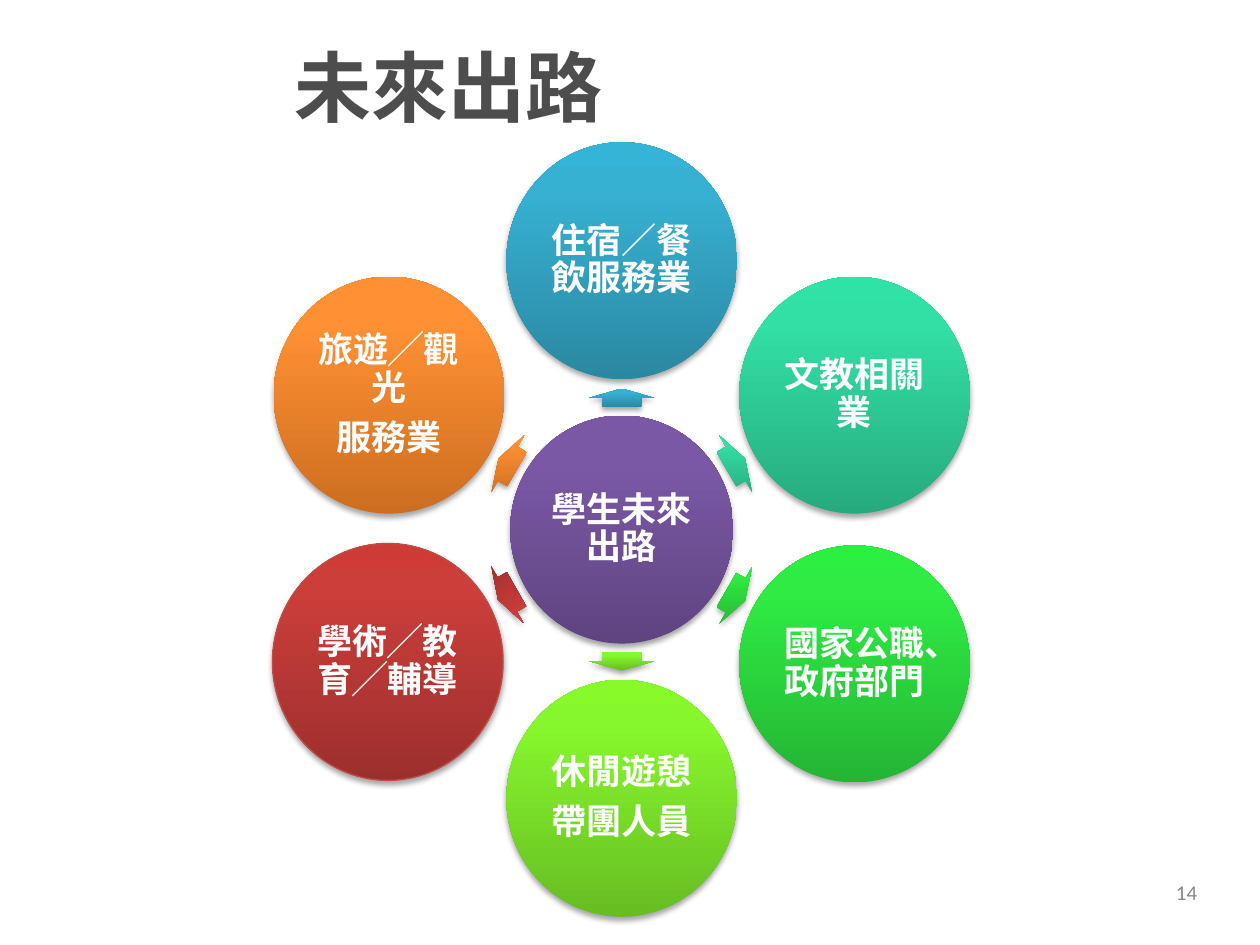
from copy import deepcopy
from dataclasses import dataclass
from math import cos, radians, sin

from lxml import etree
from pptx import Presentation
from pptx.dml.color import RGBColor
from pptx.enum import shapes as kinds, text as txt
from pptx.oxml import ns
from pptx.util import Pt


@dataclass(frozen=True)
class Theme:
    cjk: str = "Noto Sans CJK SC"
    latin: str = "Calibri"
    head: str = "4D4D4D"
    page: str = "898989"
    white: str = "FFFFFF"
    edge: str = "BF4C48"
    shade: str = "000000"
    purple: tuple = ("5F4480", "7B58A6", "7C57A8")
    blue: tuple = ("2A88A2", "37B1D2", "34B4D6")
    teal: tuple = ("27AB7E", "32DFA4", "2FE3A6")
    green: tuple = ("24B534", "2FEB43", "2CEF41")
    lime: tuple = ("67BD22", "86F62D", "86FB29")
    red: tuple = ("9C2F2D", "CB3E3A", "CE3B37")
    orange: tuple = ("CC6E20", "FF9034", "FF9136")
    title: float = 44
    label: float = 20
    small: float = 12


T = Theme()
MID = (355.3, 302.6)
RING = 153.6
REACH = 75.2
HUB = (127.4, 130.3)
DISC = (131.8, 135.4)


def rgb(code):
    return RGBColor.from_string(code)


def style(para, font, size, color, bold=False):
    for run in para.runs:
        run.font.size = Pt(size)
        run.font.bold = bold
        run.font.color.rgb = rgb(color)
        run.font.name = font
        east = etree.SubElement(run.font._element, ns.qn("a:ea"))
        east.set("typeface", font)


def add_text(slide, box, words, font, size, color, align, bold=False):
    frame = slide.shapes.add_textbox(*map(Pt, box)).text_frame
    frame.word_wrap = True
    frame.vertical_anchor = txt.MSO_ANCHOR.MIDDLE
    frame.text = words
    para = frame.paragraphs[0]
    para.alignment = align
    style(para, font, size, color, bold)


def paint(shape, tones, turn=False):
    shape.fill.gradient()
    shape.fill.gradient_angle = 90
    grad = shape._element.spPr.find(ns.qn("a:gradFill"))
    grad.set("rotWithShape", "1" if turn else "0")
    stops = grad.find(ns.qn("a:gsLst"))
    stops.append(deepcopy(stops[-1]))
    for stop, tone, place in zip(shape.fill.gradient_stops, tones, (0, 0.8, 1)):
        stop.color.rgb = rgb(tone)
        stop.position = place
    shape.line.fill.background()


def cast(shape):
    shape.shadow.inherit = False
    list_ = shape._element.spPr.find(ns.qn("a:effectLst"))
    outer = etree.SubElement(
        list_, ns.qn("a:outerShdw"), blurRad=str(Pt(3.1)), dist=str(Pt(1.8)),
        dir="5400000", rotWithShape="0")
    color = etree.SubElement(outer, ns.qn("a:srgbClr"), val=T.shade)
    etree.SubElement(color, ns.qn("a:alpha"), val="35000")


def add_form(slide, kind, mid, size, tones, turn=False):
    left, top = (m - s / 2 for m, s in zip(mid, size))
    shape = slide.shapes.add_shape(kind, Pt(left), Pt(top), *map(Pt, size))
    paint(shape, tones, turn)
    cast(shape)
    return shape


def add_disc(slide, mid, size, tones, words):
    disc = add_form(slide, kinds.MSO_SHAPE.OVAL, mid, size, tones)
    frame = disc.text_frame
    frame.word_wrap = True
    frame.vertical_anchor = txt.MSO_ANCHOR.MIDDLE
    frame.margin_left = frame.margin_right = Pt(2)
    frame.margin_top = frame.margin_bottom = Pt(2)
    frame.text = words
    for para in frame.paragraphs:
        para.alignment = txt.PP_ALIGN.CENTER
        para.line_spacing = 0.9
        para.space_after = Pt(7)
        style(para, T.cjk, T.label, T.white, True)
    return disc


def add_arrow(slide, mid, angle, tones, turn):
    size = (10.8 if angle in (90, 270) else 12.2, 37.4)
    arrow = add_form(
        slide, kinds.MSO_SHAPE.RIGHT_ARROW, mid, size, tones, turn)
    arrow.rotation = angle
    arrow.adjustments[0] = 0.6
    arrow.adjustments[1] = 0.5


def orbit(angle, reach):
    turn = radians(angle)
    return MID[0] + reach * cos(turn), MID[1] + reach * sin(turn)


def add_path(slide, angle, tones, words, edge=None):
    add_arrow(slide, orbit(angle, REACH), angle, tones, bool(edge))
    disc = add_disc(slide, orbit(angle, RING), DISC, tones, words)
    if edge:
        disc.line.color.rgb = rgb(edge)
        disc.line.width = Pt(0.75)


def main():
    deck = Presentation()
    deck.slide_width, deck.slide_height = Pt(720), Pt(540)
    slide = deck.slides.add_slide(deck.slide_layouts[6])
    add_text(slide, (161.3, 15.1, 550, 67.7), "未來出路",
             T.cjk, T.title, T.head, txt.PP_ALIGN.LEFT, True)
    add_text(slide, (575.3, 496.8, 115.9, 26.6), "14",
             T.latin, T.small, T.page, txt.PP_ALIGN.RIGHT)
    add_disc(slide, MID, HUB, T.purple, "學生未來出路")
    paths = (
        (270, T.blue, "住宿／餐飲服務業"),
        (330, T.teal, "文教相關業"),
        (30, T.green, "國家公職、政府部門"),
        (90, T.lime, "休閒遊憩\n帶團人員"),
        (150.5, T.red, "學術╱教育╱輔導", T.edge),
        (210, T.orange, "旅遊╱觀光\n服務業"),
    )
    for path in paths:
        add_path(slide, *path)
    deck.save("out.pptx")


if __name__ == "__main__":
    main()
